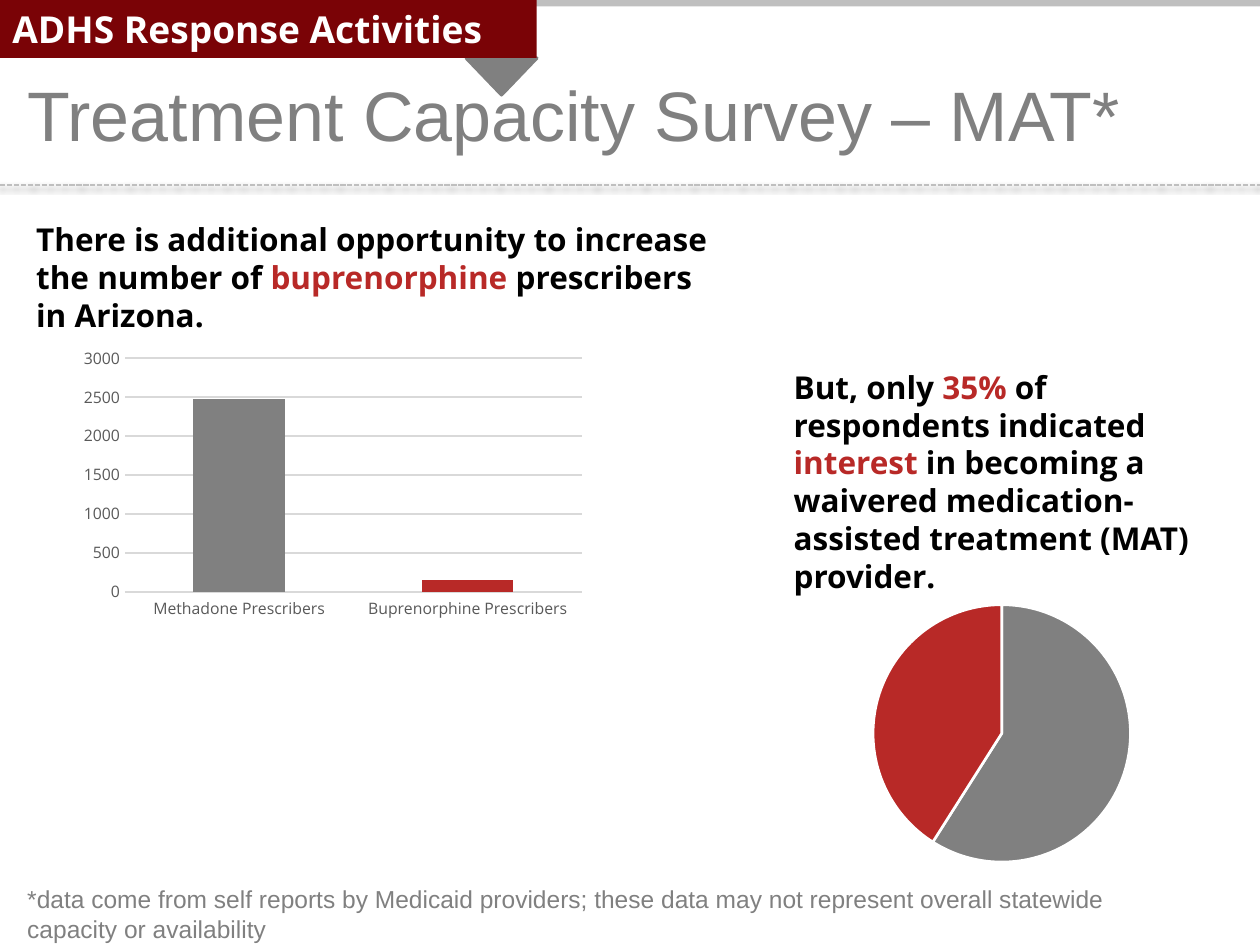
import pptx
import pptx.util
import pptx.dml.color
import pptx.chart.data
import pptx.enum.chart
import pptx.enum.dml
import pptx.enum.shapes
import pptx.enum.text
import pptx.oxml
import pptx.oxml.ns

Cm, Pt = pptx.util.Cm, pptx.util.Pt
RGB = pptx.dml.color.RGBColor
Kind = pptx.enum.chart.XL_CHART_TYPE
Shape = pptx.enum.shapes.MSO_SHAPE
Text = pptx.enum.text

GRAY = RGB(0x80, 0x80, 0x80)
SILVER = RGB(0xBF, 0xBF, 0xBF)
PALE = RGB(0xD9, 0xD9, 0xD9)
DARK = RGB(0x59, 0x59, 0x59)
MAROON = RGB(0x7A, 0x03, 0x06)
RED = RGB(0xB8, 0x29, 0x27)
BLACK = RGB(0, 0, 0)
WHITE = RGB(0xFF, 0xFF, 0xFF)
SANS, PLAIN = "Open Sans", "Arial"


def spot(box, x, y, wide, high):
    """Return slide lengths for a part at an offset in cm within a box."""
    return Cm(box[0] + x), Cm(box[1] + y), Cm(wide), Cm(high)


def write(shape, runs, size, face, bold=False, anchor=Text.MSO_ANCHOR.TOP):
    """Fill a shape with one left-aligned paragraph of coloured runs."""
    frame = shape.text_frame
    frame.word_wrap = True
    frame.auto_size = Text.MSO_AUTO_SIZE.NONE
    frame.vertical_anchor = anchor
    para = frame.paragraphs[0]
    para.alignment = Text.PP_ALIGN.LEFT
    for words, color in runs:
        run = para.add_run()
        run.text = words
        run.font.name, run.font.size, run.font.bold = face, Pt(size), bold
        run.font.color.rgb = color


def block(slide, kind, place, color):
    """Add a plain filled shape."""
    shape = slide.shapes.add_shape(kind, *place)
    shape.shadow.inherit = False
    shape.fill.solid()
    shape.fill.fore_color.rgb = color
    shape.line.fill.background()
    return shape


def rule(slide, box, y):
    """Add the dashed line with its soft shadow across a box."""
    x, top, wide, _ = spot(box, 0, y, box[2], 0)
    line = slide.shapes.add_connector(
        pptx.enum.shapes.MSO_CONNECTOR.STRAIGHT, x, top, x + wide, top)
    line.line.color.rgb = SILVER
    line.line.width = Pt(1)
    line.line.dash_style = pptx.enum.dml.MSO_LINE.SQUARE_DOT
    line._element.spPr.append(pptx.oxml.parse_xml(
        f'<a:effectLst {pptx.oxml.ns.nsdecls("a")}>'
        f'<a:outerShdw blurRad="{Pt(3.1)}" dist="{Pt(1.6)}" dir="5400000" rotWithShape="0">'
        '<a:srgbClr val="000000"><a:alpha val="38000"/></a:srgbClr>'
        '</a:outerShdw></a:effectLst>'))


def graph(slide, kind, place, cats, vals):
    """Add a chart of one series with gray and red points."""
    data = pptx.chart.data.CategoryChartData()
    data.categories = cats
    data.add_series("Series 1", vals)
    chart = slide.shapes.add_chart(kind, *place, data).chart
    chart.has_legend = chart.has_title = False
    chart.font.name, chart.font.size = SANS, Pt(9)
    chart.font.color.rgb = DARK
    for index, color in enumerate((GRAY, RED)):
        fill = chart.plots[0].series[0].points[index].format.fill
        fill.solid()
        fill.fore_color.rgb = color
    return chart


def head(slide, box):
    """Place the banner, the title and the dashed rule."""
    mark = block(slide, Shape.ISOSCELES_TRIANGLE, spot(box, 9.4, 1.17, 1.42, 0.74), GRAY)
    mark.rotation = 180
    mark.line.color.rgb = GRAY
    mark.line.width = Pt(2)
    block(slide, Shape.RECTANGLE, spot(box, 9.35, 0, 16.05, 0.13), SILVER)
    flag = block(slide, Shape.RECTANGLE, spot(box, 0, 0, 10.82, 1.17), MAROON)
    write(flag, [("ADHS Response Activities", WHITE)], 21.2, SANS, True,
          Text.MSO_ANCHOR.MIDDLE)
    rule(slide, box, box[3])
    title = slide.shapes.title
    title.left, title.top, title.width, title.height = spot(box, 0.3, 1.32, 24.77, 1.96)
    write(title, [("Treatment Capacity Survey – MAT*", GRAY)], 40, PLAIN)


def supply(slide, box):
    """Place the prescriber message above its column chart."""
    note = slide.shapes.add_textbox(*spot(box, 0, 0, box[2], 2.57))
    write(note, [
        ("There is additional opportunity to increase the number of ", BLACK),
        ("buprenorphine ", RED),
        ("prescribers in Arizona.", BLACK)], 18, SANS, True)
    chart = graph(slide, Kind.COLUMN_CLUSTERED, spot(box, 1, 2.56, 10.46, 5.72),
                  ["Methadone Prescribers", "Buprenorphine Prescribers"], [2470, 160])
    plot = chart.plots[0]
    plot.gap_width, plot.vary_by_categories = 150, False
    cat, val = chart.category_axis, chart.value_axis
    for axis in (cat, val):
        axis.major_tick_mark = pptx.enum.chart.XL_TICK_MARK.NONE
    val.minimum_scale, val.maximum_scale, val.major_unit = 0, 3000, 500
    val.format.line.fill.background()
    for line in (cat.format.line, val.major_gridlines.format.line):
        line.color.rgb = PALE
        line.width = Pt(0.75)


def demand(slide, box):
    """Place the interest message above its pie chart."""
    note = slide.shapes.add_textbox(*spot(box, 0, 0, box[2], 4.88))
    write(note, [
        ("But, only ", BLACK),
        ("35% ", RED),
        ("of respondents indicated ", BLACK),
        ("interest", RED),
        (" in becoming a waivered medication-assisted treatment (MAT) provider.", BLACK)],
        18, SANS, True)
    chart = graph(slide, Kind.PIE, spot(box, 0.38, 4.55, 8.13, 5.89), ["1", "2"], [59, 41])
    for index in range(2):
        line = chart.plots[0].series[0].points[index].format.line
        line.color.rgb = WHITE
        line.width = Pt(1.5)


def foot(slide, box):
    """Place the footnote."""
    note = slide.shapes.add_textbox(*spot(box, 0, 0, box[2], box[3]))
    write(note, [("*data come from self reports by Medicaid providers; these data may "
                  "not represent overall statewide capacity or availability", GRAY)],
          14, PLAIN)


def main():
    """Build and save the slide."""
    deck = pptx.Presentation()
    deck.slide_width, deck.slide_height = Cm(25.4), Cm(19.05)
    slide = deck.slides.add_slide(deck.slide_layouts[5])
    head(slide, (0, 0, 25.4, 3.73))
    supply(slide, (0.48, 4.32, 14.35, 8.28))
    demand(slide, (15.75, 7.29, 8.89, 10.44))
    foot(slide, (0.3, 17.7, 23.83, 1.45))
    deck.save("out.pptx")


if __name__ == "__main__":
    main()
